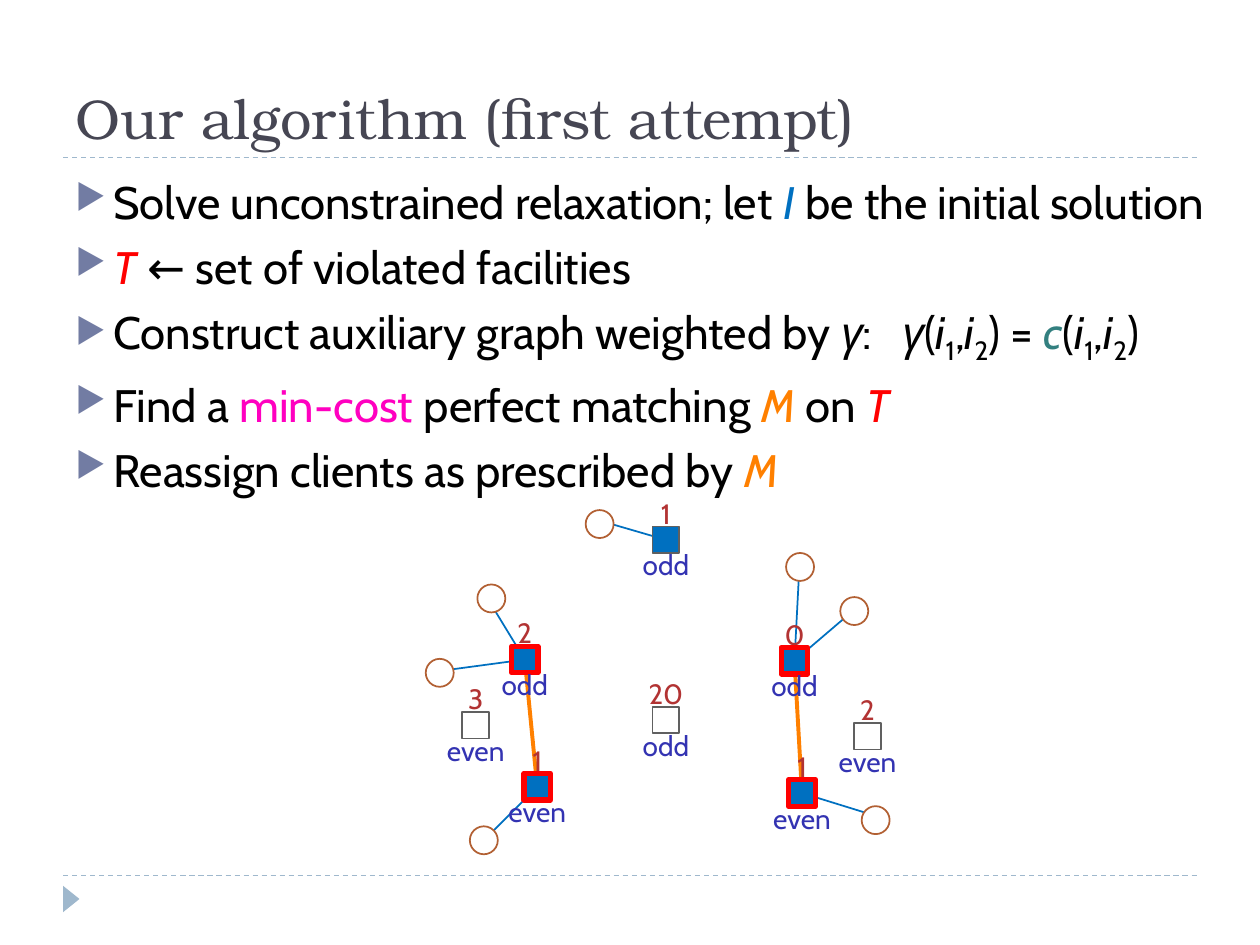
from dataclasses import dataclass

from lxml.etree import SubElement
from pptx import Presentation
from pptx.dml.color import RGBColor as RGB
from pptx.enum.dml import MSO_LINE as Dash
from pptx.enum.shapes import MSO_CONNECTOR as Link, MSO_SHAPE as Kind
from pptx.enum.text import MSO_ANCHOR as Anchor, PP_ALIGN as Align
from pptx.oxml.ns import qn
from pptx.util import Pt


@dataclass(frozen=True)
class Theme:
    title_font: str = "TeX Gyre Bonum"
    font: str = "Cabin"
    title_size: int = 32
    body_size: int = 26
    label_size: int = 16
    title: str = "464653"
    text: str = "000000"
    accent: str = "9FB8CD"
    bullet: str = "727CA3"
    blue: str = "0070C0"
    red: str = "FF0000"
    teal: str = "338080"
    pink: str = "FF00C0"
    orange: str = "FF8000"
    client: str = "B26033"
    frame: str = "606060"
    count: str = "B23333"
    parity: str = "3333B2"
    white: str = "FFFFFF"


THEME = Theme()
PLAIN = (THEME.text, False, 0)
ITALIC = (THEME.text, True, 0)
SUB = (THEME.text, False, -25)
INITIAL = (THEME.blue, True, 0)
VIOLATED = (THEME.red, True, 0)
COST = (THEME.teal, True, 0)
GOAL = (THEME.pink, False, 0)
MATCHING = (THEME.orange, True, 0)

ARGUMENTS = [("(", PLAIN), ("i", ITALIC), ("1", SUB), (",", PLAIN),
             ("i", ITALIC), ("2", SUB)]
STEPS = [
    [("Solve unconstrained relaxation; let ", PLAIN), ("I", INITIAL),
     (" be the initial solution", PLAIN)],
    [("T", VIOLATED), (" ← set of violated facilities", PLAIN)],
    [("Construct auxiliary graph weighted by ", PLAIN), ("γ", ITALIC),
     (":   ", PLAIN), ("γ", ITALIC), *ARGUMENTS, (") =", PLAIN),
     (" c", COST), *ARGUMENTS, (")", PLAIN)],
    [("Find a ", PLAIN), ("min-cost", GOAL), (" perfect matching ", PLAIN),
     ("M", MATCHING), (" on ", PLAIN), ("T", VIOLATED)],
    [("Reassign clients as prescribed by ", PLAIN), ("M", MATCHING)],
]

OPEN = (None, THEME.frame, 1)
USED = (THEME.blue, THEME.frame, 1)
BROKEN = (THEME.blue, THEME.red, 3)
FACILITIES = {
    "top": (380.5, 308.5, "1", "odd", USED),
    "left": (299.9, 376.9, "2", "odd", BROKEN),
    "right": (454, 377.6, "0", "odd", BROKEN),
    "low left": (307, 449.6, "1", "even", BROKEN),
    "low right": (458.3, 453.2, "1", "even", BROKEN),
    "far left": (271.8, 414.4, "3", "even", OPEN),
    "middle": (380.5, 411.5, "20", "odd", OPEN),
    "far right": (495.7, 420.8, "2", "even", OPEN),
}
MATCHES = [("low right", "right"), ("left", "low left")]
CLIENTS = [
    (251.3, 384.5, "left", -1, 0),
    (342.7, 299.5, "top", 0, -0.25),
    (457.2, 324, "right", 0, -1),
    (280.8, 342, "left", -0.7, -0.7),
    (276.5, 480.2, "low left", -0.7, 0.7),
    (500.4, 468.7, "low right", 1, 0),
    (488.2, 349.2, "right", 0.7, -0.7),
]
SQUARE = 15.2
CIRCLE = 16


class Painter:
    def __init__(self, page, theme):
        self.page = page
        self.theme = theme

    def style(self, span, size, colour, italic=False, baseline=0, name=None):
        font = span.font
        font.name = name or self.theme.font
        font.size = Pt(size)
        font.italic = italic
        font.color.rgb = RGB.from_string(colour)
        if baseline:
            span._r.get_or_add_rPr().set("baseline", str(baseline * 1000))

    def title(self, text, left, top, width, height):
        box = self.page.shapes.title
        box.left, box.top, box.width, box.height = map(Pt, (left, top, width, height))
        frame = box.text_frame
        frame.text = text
        frame.vertical_anchor = Anchor.BOTTOM
        para = frame.paragraphs[0]
        para.alignment = Align.LEFT
        self.style(para.runs[0], self.theme.title_size, self.theme.title,
                   name=self.theme.title_font)

    def text_box(self, left, top, width, height, wrap):
        box = self.page.shapes.add_textbox(*map(Pt, (left, top, width, height)))
        box.text_frame.word_wrap = wrap
        return box.text_frame

    def bullet(self, para):
        props = para._p.get_or_add_pPr()
        indent = Pt(21.6)
        props.set("marL", str(indent))
        props.set("indent", str(-indent))
        colour = SubElement(props, qn("a:buClr"))
        SubElement(colour, qn("a:srgbClr"), val=self.theme.bullet)
        SubElement(props, qn("a:buSzPct"), val="76000")
        SubElement(props, qn("a:buChar"), char="▶")

    def steps(self, steps, left, top, width, height):
        frame = self.text_box(left, top, width, height, True)
        for number, step in enumerate(steps):
            para = frame.add_paragraph() if number else frame.paragraphs[0]
            para.space_before = Pt(6)
            self.bullet(para)
            for text, look in step:
                span = para.add_run()
                span.text = text
                self.style(span, self.theme.body_size, *look)

    def label(self, text, x, top, colour):
        width = 54
        frame = self.text_box(x - width / 2, top, width, 28.8, False)
        frame.text = text
        para = frame.paragraphs[0]
        para.alignment = Align.CENTER
        self.style(para.runs[0], self.theme.label_size, colour)

    def line(self, start, end, colour, weight, dash=None):
        line = self.page.shapes.add_connector(Link.STRAIGHT, *map(Pt, (*start, *end)))
        line.line.color.rgb = RGB.from_string(colour)
        line.line.width = Pt(weight)
        if dash:
            line.line.dash_style = dash
        SubElement(line._element.spPr, qn("a:effectLst"))

    def shape(self, kind, x, y, width, height, fill, outline=None, weight=1):
        shape = self.page.shapes.add_shape(
            kind, *map(Pt, (x - width / 2, y - height / 2, width, height)))
        shape.shadow.inherit = False
        if fill:
            shape.fill.solid()
            shape.fill.fore_color.rgb = RGB.from_string(fill)
        else:
            shape.fill.background()
        if outline:
            shape.line.color.rgb = RGB.from_string(outline)
            shape.line.width = Pt(weight)
        else:
            shape.line.fill.background()
        return shape


def main():
    deck = Presentation()
    deck.slide_width, deck.slide_height = Pt(720), Pt(540)
    painter = Painter(deck.slides.add_slide(deck.slide_layouts[5]), THEME)

    for y in (500.4, 90):
        painter.line((36, y), (684, y), THEME.accent, 0.75, Dash.DASH)
    marker = painter.shape(Kind.ISOSCELES_TRIANGLE, 40.7, 513.7, 15.1, 9.4, THEME.accent)
    marker.rotation = 90
    painter.title("Our algorithm (first attempt)", 36, 12.2, 648, 77.8)
    painter.steps(STEPS, 36, 95.8, 684, 388.8)

    for first, second in MATCHES:
        painter.line(FACILITIES[first][:2], FACILITIES[second][:2], THEME.orange, 2.25)
    for x, y, facility, across, down in CLIENTS:
        site = (x + across * CIRCLE / 2, y + down * CIRCLE / 2)
        painter.line(FACILITIES[facility][:2], site, THEME.blue, 1)
    for x, y, count, parity, look in FACILITIES.values():
        painter.label(count, x, y - 28.4, THEME.count)
        painter.shape(Kind.RECTANGLE, x, y, SQUARE, SQUARE, *look)
        painter.label(parity, x, y + 1.1, THEME.parity)
    for x, y, *_ in CLIENTS:
        painter.shape(Kind.OVAL, x, y, CIRCLE, CIRCLE, THEME.white, THEME.client)

    deck.save("out.pptx")


if __name__ == "__main__":
    main()
